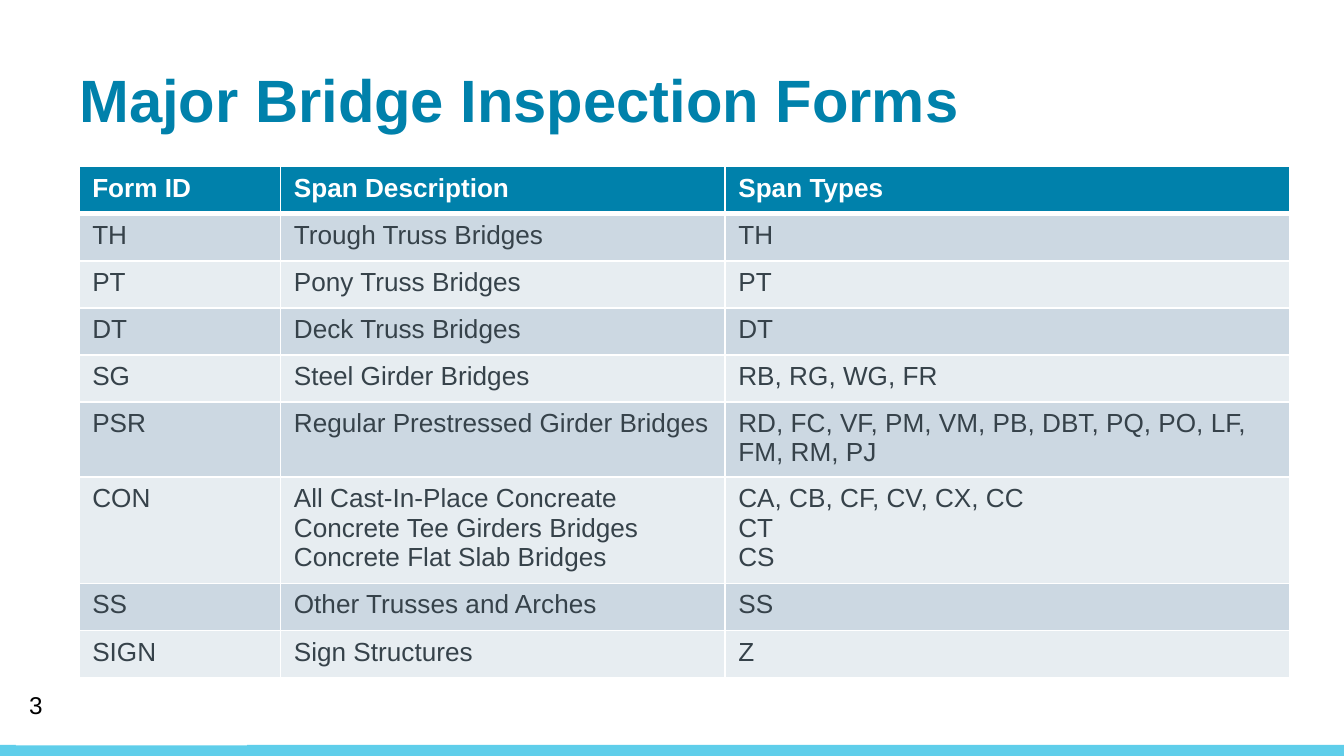
from pptx import Presentation
from pptx.dml.color import RGBColor
from pptx.enum.shapes import MSO_SHAPE
from pptx.enum.text import MSO_ANCHOR, MSO_AUTO_SIZE, PP_ALIGN
from pptx.oxml.ns import qn
from pptx.util import Cm, Pt
from lxml.etree import SubElement

TEAL = RGBColor(0x00, 0x81, 0xAB)
SKY = RGBColor(0x5F, 0xCE, 0xEA)
BAND_DARK = RGBColor(0xCC, 0xD8, 0xE2)
BAND_LIGHT = RGBColor(0xE7, 0xED, 0xF1)
SLATE = RGBColor(0x36, 0x42, 0x4A)
WHITE = RGBColor(0xFF, 0xFF, 0xFF)
BLACK = RGBColor(0x00, 0x00, 0x00)

COL_WIDTHS = [3.81, 8.4, 10.67]
ROW_HEIGHTS = {1: 0.89, 2: 1.42, 3: 2.01}
FORMS = [
    (1, "Form ID", "Span Description", "Span Types"),
    (1, "TH", "Trough Truss Bridges", "TH"),
    (1, "PT", "Pony Truss Bridges", "PT"),
    (1, "DT", "Deck Truss Bridges", "DT"),
    (1, "SG", "Steel Girder Bridges", "RB, RG, WG, FR"),
    (2, "PSR", "Regular Prestressed Girder Bridges",
     "RD, FC, VF, PM, VM, PB, DBT, PQ, PO, LF, FM, RM, PJ"),
    (3, "CON",
     "All Cast-In-Place Concreate\nConcrete Tee Girders Bridges\nConcrete Flat Slab Bridges",
     "CA, CB, CF, CV, CX, CC\nCT\nCS"),
    (1, "SS", "Other Trusses and Arches", "SS"),
    (1, "SIGN", "Sign Structures", "Z"),
]


def set_font(p, size, color, bold=False):
    p.font.name = "Arial"
    p.font.size = Pt(size)
    p.font.bold = bold
    p.font.color.rgb = color


def add_bar(s, left, top, width, height, color):
    sp = s.shapes.add_shape(MSO_SHAPE.RECTANGLE, Cm(left), Cm(top), Cm(width), Cm(height))
    sp.shadow.inherit = False
    sp.fill.solid()
    sp.fill.fore_color.rgb = color
    sp.line.fill.background()


def add_title(s, text):
    sp = s.shapes.title
    sp.left, sp.top, sp.width, sp.height = Cm(1.5), Cm(0.94), Cm(22.83), Cm(1.45)
    tf = sp.text_frame
    tf.text = text
    tf.auto_size = MSO_AUTO_SIZE.NONE
    tf.vertical_anchor = MSO_ANCHOR.TOP
    tf.margin_left, tf.margin_top, tf.margin_bottom = Cm(0), Cm(0.25), Cm(0)
    p = tf.paragraphs[0]
    p.alignment = PP_ALIGN.LEFT
    set_font(p, 32, TEAL, True)


def set_borders(cell, top, bottom):
    tcPr = cell._tc.get_or_add_tcPr()
    for side, width in (("L", 1), ("R", 1), ("T", top), ("B", bottom)):
        ln = SubElement(tcPr, qn(f"a:ln{side}"), w=str(Pt(width)))
        fill = SubElement(ln, qn("a:solidFill"))
        SubElement(fill, qn("a:srgbClr"), val=str(WHITE))


def add_forms_table(s):
    table = s.shapes.add_table(
        len(FORMS), len(COL_WIDTHS), Cm(1.49), Cm(3.15),
        Cm(sum(COL_WIDTHS)), Cm(sum(ROW_HEIGHTS[row[0]] for row in FORMS))).table
    for col, width in zip(table.columns, COL_WIDTHS):
        col.width = Cm(width)
    for i, (lines, *texts) in enumerate(FORMS):
        table.rows[i].height = Cm(ROW_HEIGHTS[lines])
        header = i == 0
        band = TEAL if header else BAND_DARK if i % 2 else BAND_LIGHT
        for cell, text in zip(table.rows[i].cells, texts):
            cell.text = text
            set_borders(cell, 3 if i == 1 else 1, 3 if header else 1)
            cell.fill.solid()
            cell.fill.fore_color.rgb = band
            for p in cell.text_frame.paragraphs:
                set_font(p, 14, WHITE if header else SLATE, header)


def add_page_number(s, text):
    tf = s.shapes.add_textbox(Cm(0.3), Cm(12.95), Cm(5.72), Cm(0.76)).text_frame
    tf.word_wrap = True
    tf.vertical_anchor = MSO_ANCHOR.MIDDLE
    tf.text = text
    set_font(tf.paragraphs[0], 13, BLACK)


def main():
    prs = Presentation()
    prs.slide_width, prs.slide_height = Cm(25.4), Cm(14.29)
    s = prs.slides.add_slide(prs.slide_layouts[5])
    add_bar(s, 0, 14.08, 25.4, 0.21, SKY)
    add_bar(s, 0.3, 13.76, 4.37, 0.33, WHITE)
    add_forms_table(s)
    add_title(s, "Major Bridge Inspection Forms")
    add_page_number(s, "3")
    prs.save("out.pptx")


if __name__ == "__main__":
    main()
